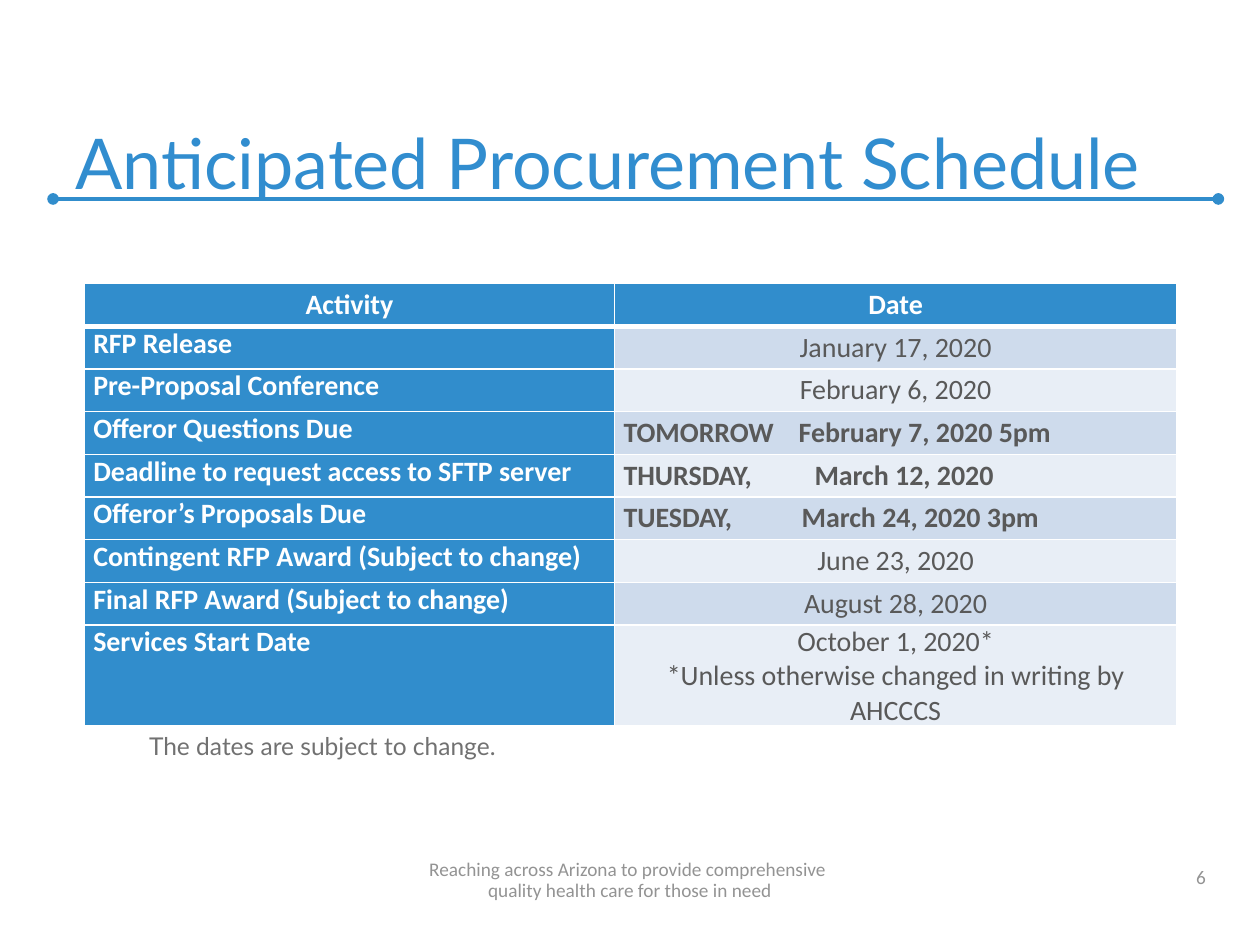
"""Build the anticipated procurement schedule slide."""
from lxml import etree
from pptx import Presentation
from pptx import util as u
from pptx.dml.color import RGBColor
from pptx.enum import shapes, text
from pptx.oxml import ns

COLORS = {"title": "318DCF", "blue": "318DCC", "white": "FFFFFF", "date": "595959",
          "note": "717171", "footer": "939393", "odd": "CEDBEC", "even": "E8EEF6"}
LEFT, CENTER, RIGHT = text.PP_ALIGN.LEFT, text.PP_ALIGN.CENTER, text.PP_ALIGN.RIGHT
TOP, MIDDLE, BOTTOM = text.MSO_ANCHOR.TOP, text.MSO_ANCHOR.MIDDLE, text.MSO_ANCHOR.BOTTOM

ROWS = [
    ("RFP Release", "January 17, 2020", None),
    ("Pre-Proposal Conference", "February 6, 2020", None),
    ("Offeror Questions Due", "TOMORROW\tFebruary 7, 2020 5pm", 3.53),
    ("Deadline to request access to SFTP server", "THURSDAY,\tMarch 12, 2020", 3.85),
    ("Offeror’s Proposals Due", "TUESDAY,\tMarch 24, 2020 3pm", 3.59),
    ("Contingent RFP Award (Subject to change)", "June 23, 2020", None),
    ("Final RFP Award (Subject to change)", "August 28, 2020", None),
    ("Services Start Date",
     "October 1, 2020*\n*Unless otherwise changed in writing by AHCCCS", None),
]


def rgb(name):
    return RGBColor.from_string(COLORS[name])


def sub(parent, tag, **attrs):
    return etree.SubElement(parent, ns.qn(tag), {k: str(v) for k, v in attrs.items()})


class Deck:
    """Hold the presentation, its style and the current slide."""

    fonts = {
        "title": {"name": "Lato", "size": u.Pt(40)},
        "note": {"name": "Lato", "size": u.Pt(14)},
        "footer": {"name": "Calibri", "size": u.Pt(11)},
        "bold": {"name": "Calibri", "size": u.Pt(16), "bold": True},
        "plain": {"name": "Calibri", "size": u.Pt(16), "bold": False},
    }

    def __init__(self, width, height):
        self.prs = Presentation()
        self.prs.slide_width, self.prs.slide_height = u.Cm(width), u.Cm(height)
        self.s = self.prs.slides.add_slide(self.prs.slide_layouts[1])

    def put_text(self, tf, content, font, color, align=LEFT, spacing=None):
        tf.text = content
        for p in tf.paragraphs:
            p.alignment = align
            if spacing:
                p.line_spacing = spacing
            for r in p.runs:
                for key, value in self.fonts[font].items():
                    setattr(r.font, key, value)
                r.font.color.rgb = rgb(color)

    def placeholder(self, idx, box, content, font, color, anchor):
        sp = self.s.placeholders[idx]
        sp.left, sp.top, sp.width, sp.height = map(u.Cm, box)
        sp.text_frame.vertical_anchor = anchor
        self.put_text(sp.text_frame, content, font, color)
        return sp

    def note(self, box, content):
        p = self.placeholder(1, box, content, "note", "note", TOP).text_frame.paragraphs[0]
        p.level = 1
        p.space_before = u.Pt(0)
        pPr = p._p.get_or_add_pPr()
        pPr.set("marL", str(u.Cm(1.27)))
        pPr.set("indent", "0")
        sub(pPr, "a:buNone")

    def textbox(self, box, content, align, spacing=None):
        tf = self.s.shapes.add_textbox(*map(u.Cm, box)).text_frame
        tf.word_wrap, tf.vertical_anchor = True, BOTTOM
        self.put_text(tf, content, "footer", "footer", align, spacing)

    def rule(self, x1, x2, y):
        sp = self.s.shapes.add_connector(shapes.MSO_CONNECTOR.STRAIGHT,
                                         u.Cm(x1), u.Cm(y), u.Cm(x2), u.Cm(y))
        sp.line.color.rgb, sp.line.width = rgb("blue"), u.Pt(2.25)
        ln = sp.line._get_or_add_ln()
        for end in ("a:headEnd", "a:tailEnd"):
            sub(ln, end, type="oval")
        sub(sp._element.spPr, "a:effectLst")

    def cell(self, cell, content, font, color, fill, align, anchor, top=1, bottom=1, tab=None):
        cell.margin_left = cell.margin_right = u.Cm(0.18)
        cell.margin_top = cell.margin_bottom = 0
        cell.vertical_anchor = anchor
        self.put_text(cell.text_frame, content, font, color, align)
        if tab:
            pPr = cell.text_frame.paragraphs[0]._p.get_or_add_pPr()
            sub(sub(pPr, "a:tabLst"), "a:tab", pos=u.Cm(tab), algn="l")
        tcPr = cell._tc.get_or_add_tcPr()
        for side, width in (("L", 1), ("R", 1), ("T", top), ("B", bottom)):
            ln = sub(tcPr, f"a:ln{side}", w=u.Pt(width))
            sub(sub(ln, "a:solidFill"), "a:srgbClr", val=COLORS["white"])
        cell.fill.solid()
        cell.fill.fore_color.rgb = rgb(fill)

    def schedule(self, box, widths, row_height, last_height, headers, rows):
        tbl = self.s.shapes.add_table(len(rows) + 1, 2, *map(u.Cm, box)).table
        for col, width in zip(tbl.columns, widths):
            col.width = u.Cm(width)
        for row in tbl.rows:
            row.height = u.Cm(row_height)
        tbl.rows[len(rows)].height = u.Cm(last_height)
        for c, header in enumerate(headers):
            self.cell(tbl.cell(0, c), header, "bold", "white", "blue", CENTER, MIDDLE, bottom=3)
        for i, (activity, date, tab) in enumerate(rows, 1):
            top = 3 if i == 1 else 1
            self.cell(tbl.cell(i, 0), activity, "bold", "white", "blue", LEFT, TOP, top)
            self.cell(tbl.cell(i, 1), date, "bold" if tab else "plain", "date",
                      "odd" if i % 2 else "even", LEFT if tab else CENTER, MIDDLE, top, tab=tab)


def main():
    deck = Deck(25.4, 19.05)
    deck.rule(1.07, 24.56, 4.01)
    deck.placeholder(0, (1.27, 0.85, 23.06, 3.39), "Anticipated Procurement Schedule",
                     "title", "title", BOTTOM)
    deck.textbox((18.63, 17.22, 5.93, 0.81), "6", RIGHT)
    deck.textbox((0, 17.22, 25.4, 1.07), "Reaching across Arizona to provide comprehensive "
                 "\vquality health care for those in need", CENTER, u.Pt(12))
    deck.note((1.48, 14.61, 23.28, 1.07), "The dates are subject to change.")
    deck.schedule((1.7, 5.72, 22.02, 8.61), (10.69, 11.33), 0.86, 1.73,
                  ("Activity", "Date"), ROWS)
    deck.prs.save("out.pptx")


if __name__ == "__main__":
    main()
